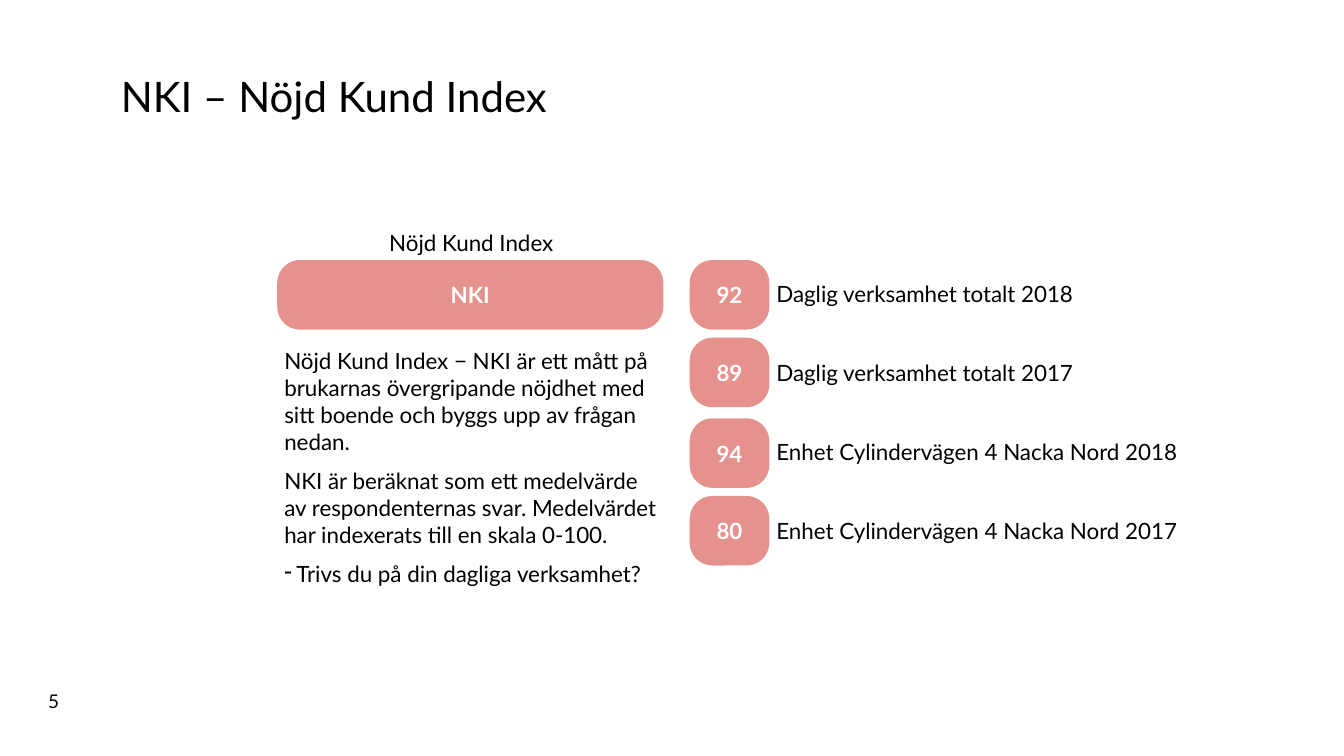
from dataclasses import dataclass, field

from lxml.etree import SubElement
from pptx import Presentation
from pptx.dml.color import RGBColor
from pptx.enum.shapes import MSO_SHAPE
from pptx.enum.text import MSO_ANCHOR, PP_ALIGN
from pptx.oxml.ns import qn
from pptx.slide import Slide
from pptx.text.text import TextFrame
from pptx.util import Inches, Pt

COLORS = {"ink": "000000", "paper": "FFFFFF", "rose": "E5928E"}
FONT = "Lato"
INSET = {
    "margin_left": Inches(0.07),
    "margin_top": Inches(0.05),
    "margin_right": Inches(0.05),
    "margin_bottom": Inches(0.04),
}


@dataclass
class Line:
    text: str
    format: dict = field(default_factory=dict)
    bullet: bool = False


@dataclass
class Label:
    left: float
    top: float
    width: float
    height: float
    lines: list[Line]
    size: float = 16
    frame: dict = field(default_factory=lambda: dict(INSET))


@dataclass
class Badge:
    left: float
    top: float
    width: float
    text: str


def color(name: str) -> RGBColor:
    return RGBColor.from_string(COLORS[name])


def assign(target: object, values: dict) -> None:
    for key, value in values.items():
        setattr(target, key, value)


def write(frame: TextFrame, lines: list[Line], size: float, ink: str, bold: bool) -> None:
    for index, line in enumerate(lines):
        para = frame.add_paragraph() if index else frame.paragraphs[0]
        assign(para, line.format)
        if line.bullet:
            props = para._p.get_or_add_pPr()
            assign_indent = {"marL": Inches(0.12), "indent": -Inches(0.12)}
            for key, value in assign_indent.items():
                props.set(key, str(value))
            SubElement(props, qn("a:buChar"), char="-")
        run = para.add_run()
        run.text = line.text
        assign(run.font, {"name": FONT, "size": Pt(size), "bold": bold})
        run.font.color.rgb = color(ink)


def draw_label(slide: Slide, label: Label) -> None:
    spot = map(Inches, (label.left, label.top, label.width, label.height))
    frame = slide.shapes.add_textbox(*spot).text_frame
    assign(frame, {"word_wrap": True, **label.frame})
    write(frame, label.lines, label.size, "ink", False)


def draw_badge(slide: Slide, badge: Badge) -> None:
    spot = map(Inches, (badge.left, badge.top, badge.width, 0.69))
    shape = slide.shapes.add_shape(MSO_SHAPE.ROUNDED_RECTANGLE, *spot)
    shape.adjustments[0] = 0.33
    shape.shadow.inherit = False
    shape.fill.solid()
    shape.fill.fore_color.rgb = color("rose")
    shape.line.fill.background()
    shape.text_frame.vertical_anchor = MSO_ANCHOR.MIDDLE
    line = Line(badge.text, {"alignment": PP_ALIGN.CENTER})
    write(shape.text_frame, [line], 16, "paper", True)


GAP = {"space_before": Pt(9)}
SCORES = [
    (2.58, "92", "Daglig verksamhet totalt 2018"),
    (3.35, "89", "Daglig verksamhet totalt 2017"),
    (4.15, "94", "Enhet Cylindervägen 4 Nacka Nord 2018"),
    (4.92, "80", "Enhet Cylindervägen 4 Nacka Nord 2017"),
]
LABELS = [
    Label(0.38, 6.79, 0.43, 0.33, [Line("5")], 13.5, {"word_wrap": False}),
    Label(
        1.1, 0.63, 11.38, 0.63,
        [Line("NKI – Nöjd Kund Index", {"line_spacing": 0.9})],
        30,
        {"vertical_anchor": MSO_ANCHOR.BOTTOM},
    ),
    Label(2.75, 2.22, 3.83, 4.04, [
        Line("Nöjd Kund Index", {"alignment": PP_ALIGN.CENTER}),
        Line(
            "Nöjd Kund Index − NKI är ett mått på brukarnas övergripande "
            "nöjdhet med sitt boende och byggs upp av frågan nedan.",
            {"space_before": Pt(65.4)},
        ),
        Line(
            "NKI är beräknat som ett medelvärde av respondenternas svar. "
            "Medelvärdet har indexerats till en skala 0-100.",
            GAP,
        ),
        Line("Trivs du på din dagliga verksamhet?", GAP, True),
    ]),
    Label(7.63, 2.73, 4.19, 2.88, [
        Line(name, {"space_before": Pt(37.2 if index else 0)})
        for index, (_, _, name) in enumerate(SCORES)
    ]),
]
BADGES = [Badge(2.75, 2.58, 3.83, "NKI")] + [
    Badge(6.84, top, 0.79, score) for top, score, _ in SCORES
]


def main() -> None:
    deck = Presentation()
    assign(deck, {"slide_width": Inches(13.33), "slide_height": Inches(7.5)})
    slide = deck.slides.add_slide(deck.slide_layouts[6])
    for label in LABELS:
        draw_label(slide, label)
    for badge in BADGES:
        draw_badge(slide, badge)
    deck.save("out.pptx")


if __name__ == "__main__":
    main()
